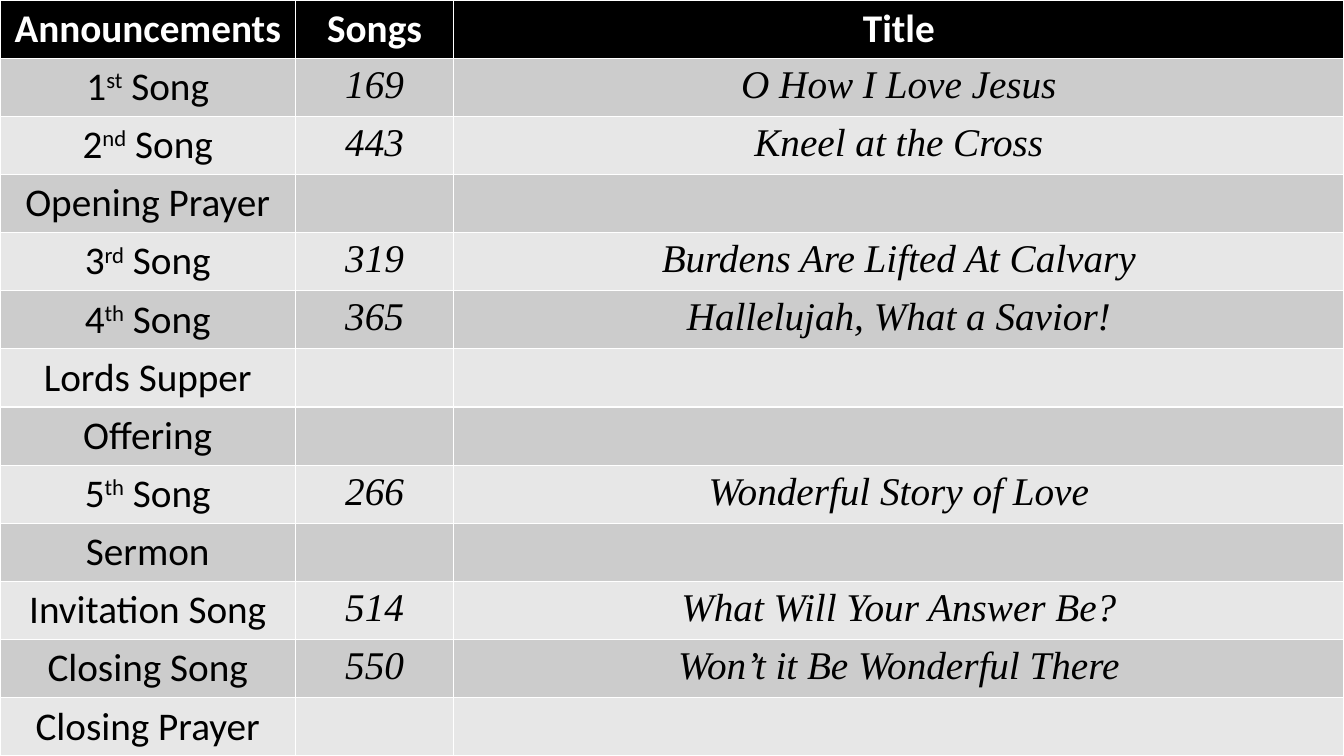
"""Order of service slide: a full-page table of songs and their titles."""
from pptx import Presentation
from pptx.dml.color import RGBColor
from pptx.enum import text
from pptx.util import Inches, Pt

COLORS = {"header": "000000", "odd": "CCCCCC", "even": "E7E7E7",
          "light": "FFFFFF", "dark": "000000"}

SERVICE = [
    ("Announcements", "Songs", "Title"),
    ("1^st^ Song", "169", "O How I Love Jesus"),
    ("2^nd^ Song", "443", "Kneel at the Cross"),
    ("Opening Prayer", "", ""),
    ("3^rd^ Song", "319", "Burdens Are Lifted At Calvary"),
    ("4^th^ Song", "365", "Hallelujah, What a Savior!"),
    ("Lords Supper", "", ""),
    ("Offering", "", ""),
    ("5^th^ Song", "266", "Wonderful Story of Love"),
    ("Sermon", "", ""),
    ("Invitation Song", "514", "What Will Your Answer Be?"),
    ("Closing Song", "550", "Won’t it Be Wonderful There"),
    ("Closing Prayer", "", ""),
]

deck = Presentation()
deck.slide_width, deck.slide_height = Inches(13.33), Inches(7.5)
page = deck.slides.add_slide(deck.slide_layouts[6])
table = page.shapes.add_table(len(SERVICE), 3, 0, 0,
                              deck.slide_width, deck.slide_height).table
for column, width in zip(table.columns, (2.93, 1.57, 8.83)):
    column.width = Inches(width)

for row_index, entry in enumerate(SERVICE):
    is_header = row_index == 0
    band = "header" if is_header else "odd" if row_index % 2 else "even"
    for column_index, wording in enumerate(entry):
        cell = table.cell(row_index, column_index)
        cell.fill.solid()
        cell.fill.fore_color.rgb = RGBColor.from_string(COLORS[band])
        para = cell.text_frame.paragraphs[0]
        para.alignment = text.PP_ALIGN.CENTER
        is_song = not is_header and column_index > 0
        para.font.name = "Times New Roman" if is_song else "Calibri"
        para.font.size = Pt(28)
        para.font.bold = is_header
        para.font.italic = is_song
        ink = COLORS["light" if is_header else "dark"]
        para.font.color.rgb = RGBColor.from_string(ink)
        if not wording:
            continue
        for part_index, part in enumerate(wording.split("^")):
            span = para.add_run()
            span.text = part
            if part_index == 1:
                span._r.get_or_add_rPr().set("baseline", "30000")

deck.save("out.pptx")
